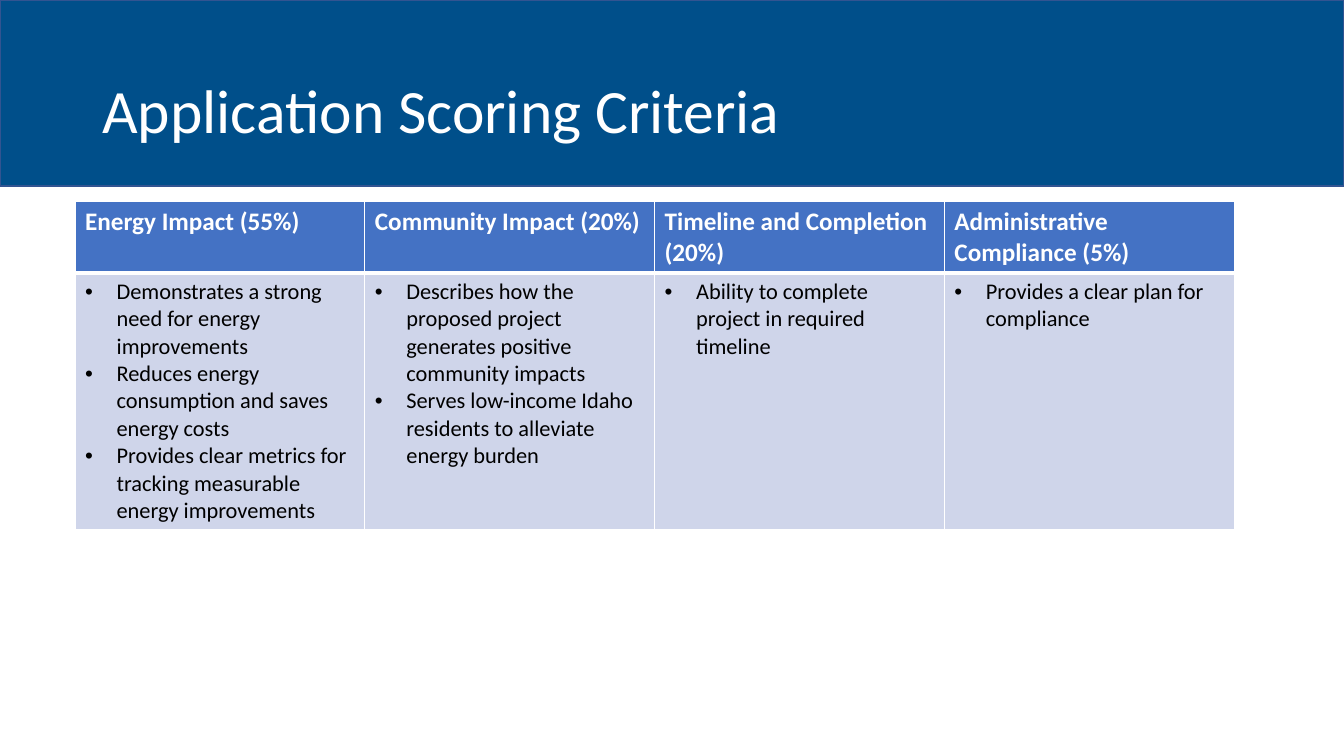
import pptx
import pptx.dml.color
import pptx.enum.shapes
import pptx.enum.text
import pptx.oxml.ns
import pptx.util
import lxml.etree

Pt = pptx.util.Pt

TITLE = "Application Scoring Criteria"
CRITERIA = {
    "Energy Impact (55%)": [
        "Demonstrates a strong need for energy improvements",
        "Reduces energy consumption and saves energy costs",
        "Provides clear metrics for tracking measurable energy improvements",
    ],
    "Community Impact (20%)": [
        "Describes how the proposed project generates positive community impacts",
        "Serves low-income Idaho residents to alleviate energy burden",
    ],
    "Timeline and Completion (20%)": ["Ability to complete project in required timeline"],
    "Administrative Compliance (5%)": ["Provides a clear plan for compliance"],
}

THEME = {
    "font": "Calibri",
    "white": "FFFFFF", "black": "000000",
    "banner": "004F8A", "banner_line": "325491",
    "header": "4472C4", "body": "CFD5EA",
    "title_size": 44, "header_size": 18, "body_size": 16,
}

SLIDE_W, SLIDE_H = 960, 540
BANNER_H = 133
TITLE_BOX = (66, 29, 828, 104)
TABLE_LEFT, TABLE_TOP, TABLE_W = 53.6, 144, 828
ROW_HEIGHTS = (51, 183)
BULLET_INDENT = 22.5
THIN, THICK = 1, 3


def color(name):
    return pptx.dml.color.RGBColor.from_string(THEME[name])


def add_element(parent, tag, **attributes):
    return lxml.etree.SubElement(parent, pptx.oxml.ns.qn(tag), attributes)


def write(frame, lines, size, ink, bold=False, bullet=False, spacing=None):
    frame.word_wrap = True
    for number, line in enumerate(lines):
        paragraph = frame.paragraphs[0] if number == 0 else frame.add_paragraph()
        if spacing:
            paragraph.line_spacing = spacing
        if bullet:
            properties = paragraph._p.get_or_add_pPr()
            properties.set("marL", str(Pt(BULLET_INDENT)))
            properties.set("indent", str(-Pt(BULLET_INDENT)))
            add_element(properties, "a:buFont", typeface="Arial")
            add_element(properties, "a:buChar", char="•")
        run = paragraph.add_run()
        run.text = line
        run.font.name = THEME["font"]
        run.font.size = Pt(THEME[size])
        run.font.bold = bold
        run.font.color.rgb = color(ink)


def style_cell(cell, fill, top, bottom):
    properties = cell._tc.get_or_add_tcPr()
    for side, width in (("L", THIN), ("R", THIN), ("T", top), ("B", bottom)):
        border = add_element(properties, "a:ln" + side, w=str(Pt(width)))
        add_element(add_element(border, "a:solidFill"), "a:srgbClr", val=THEME["white"])
    cell.fill.solid()
    cell.fill.fore_color.rgb = color(fill)


def add_banner(slide):
    banner = slide.shapes.add_shape(
        pptx.enum.shapes.MSO_SHAPE.RECTANGLE, 0, 0, Pt(SLIDE_W), Pt(BANNER_H))
    banner.shadow.inherit = False
    banner.fill.solid()
    banner.fill.fore_color.rgb = color("banner")
    banner.line.color.rgb = color("banner_line")
    banner.line.width = Pt(THIN)

    title = slide.shapes.add_textbox(*map(Pt, TITLE_BOX)).text_frame
    title.vertical_anchor = pptx.enum.text.MSO_ANCHOR.MIDDLE
    write(title, [TITLE], "title_size", "white", spacing=0.9)


def add_criteria(slide):
    table = slide.shapes.add_table(
        len(ROW_HEIGHTS), len(CRITERIA), Pt(TABLE_LEFT), Pt(TABLE_TOP),
        Pt(TABLE_W), Pt(sum(ROW_HEIGHTS))).table
    for row, height in zip(table.rows, ROW_HEIGHTS):
        row.height = Pt(height)
    for index, (criterion, points) in enumerate(CRITERIA.items()):
        table.columns[index].width = Pt(TABLE_W / len(CRITERIA))
        heading, details = table.cell(0, index), table.cell(1, index)
        write(heading.text_frame, [criterion], "header_size", "white", bold=True)
        style_cell(heading, "header", THIN, THICK)
        write(details.text_frame, points, "body_size", "black", bullet=True)
        style_cell(details, "body", THICK, THIN)


def main():
    deck = pptx.Presentation()
    deck.slide_width, deck.slide_height = Pt(SLIDE_W), Pt(SLIDE_H)
    slide = deck.slides.add_slide(deck.slide_layouts[6])
    add_banner(slide)
    add_criteria(slide)
    deck.save("out.pptx")


if __name__ == "__main__":
    main()
